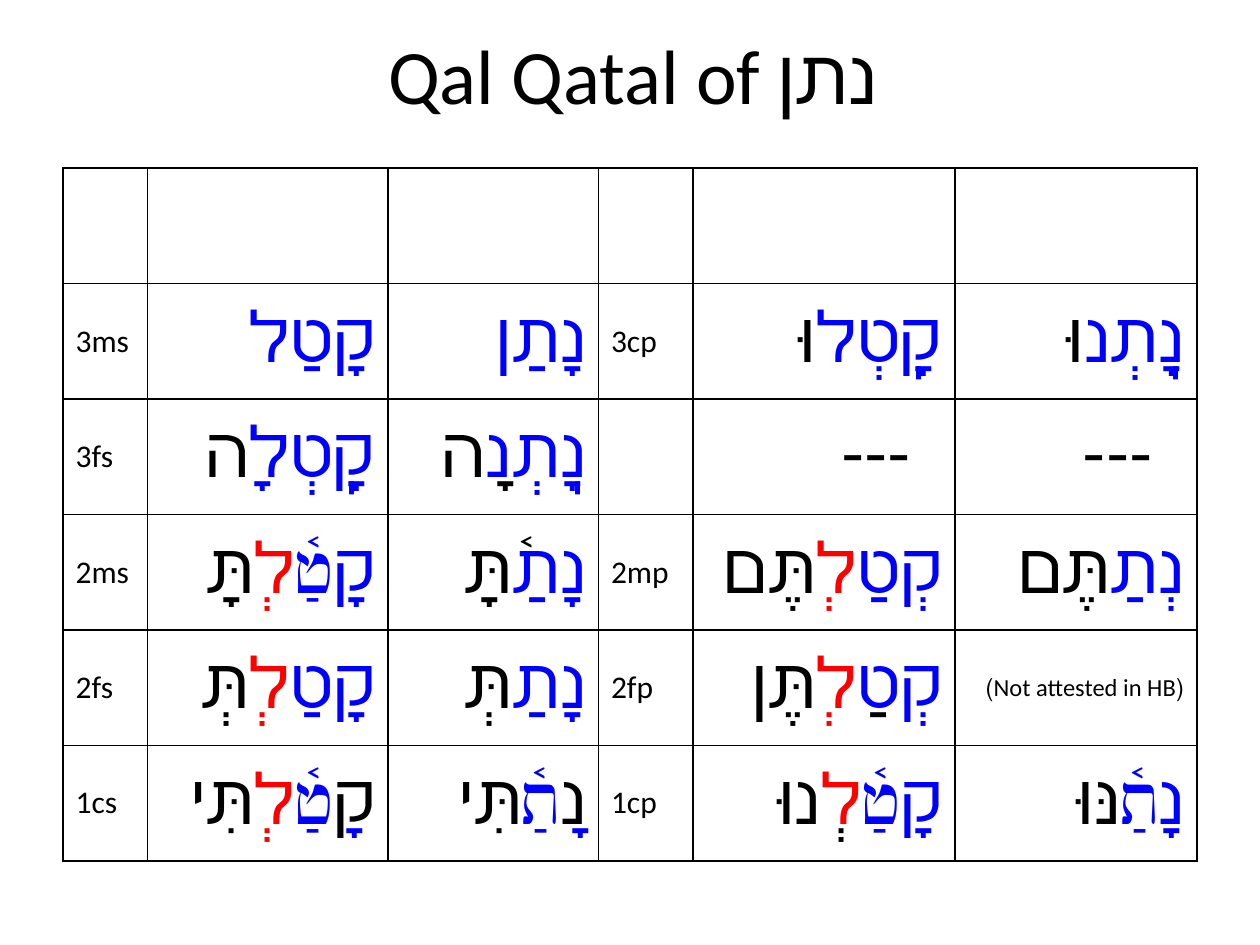
from lxml.etree import SubElement
from pptx import Presentation
from pptx.dml.color import RGBColor as RGB
from pptx.enum.text import MSO_ANCHOR as ANCHOR, PP_ALIGN as ALIGN
from pptx.oxml.ns import qn
from pptx.util import Inches, Pt

COLORS = {"black": "000000", "stem": "0000FF", "root": "FF0000"}


def add_run(p, text, size, font, color="black"):
    r = p.add_run()
    r.text = text
    r.font.size = Pt(size)
    r.font.name = font
    r.font.color.rgb = RGB.from_string(COLORS[color])


def add_borders(cell):
    tc_pr = cell._tc.get_or_add_tcPr()
    for side in ("lnL", "lnR", "lnT", "lnB"):
        ln = SubElement(tc_pr, qn(f"a:{side}"), w=str(Pt(1)))
        fill = SubElement(ln, qn("a:solidFill"))
        SubElement(fill, qn("a:srgbClr"), val=COLORS["black"])


prs = Presentation()
prs.slide_width, prs.slide_height = Inches(10), Inches(7.5)
s = prs.slides.add_slide(prs.slide_layouts[5])

# Title
title = s.shapes.title
title.left, title.top = Inches(0.52), Inches(0)
title.width, title.height = Inches(9), Inches(1.17)
tf = title.text_frame
tf.vertical_anchor = ANCHOR.MIDDLE
p = tf.paragraphs[0]
p.alignment = ALIGN.CENTER
add_run(p, "Qal Qatal of ", 44, "Calibri")
add_run(p, "נתן", 44, "Arial")

# Paradigm: a string is a label, a list holds the coloured parts of a verb form
DASHES = [("\t---", "black")]
ROWS = [
    ["", "", "", "", "", ""],
    ["3ms", [("קָטַל", "stem")], [("נָתַן", "stem")],
     "3cp", [("קָֽטְל", "stem"), ("וּ", "black")], [("נָֽתְנ", "stem"), ("וּ", "black")]],
    ["3fs", [("קָֽטְלָ", "stem"), ("ה", "black")], [("נָֽתְנ", "stem"), ("ָה", "black")],
     "", DASHES, DASHES],
    ["2ms", [("קָטַ֫", "stem"), ("לְ", "root"), ("תָּ", "black")],
     [("נָתַ", "stem"), ("֫תָּ", "black")],
     "2mp", [("קְטַ", "stem"), ("לְ", "root"), ("תֶּם", "black")],
     [("נְתַ", "stem"), ("תֶּם", "black")]],
    ["2fs", [("קָטַ", "stem"), ("לְ", "root"), ("תְּ", "black")],
     [("נָתַ", "stem"), ("תְּ", "black")],
     "2fp", [("קְט", "stem"), ("ַ", "black"), ("לְ", "root"), ("תֶּן", "black")],
     "(Not attested in HB)"],
    ["1cs", [("ק", "black"), ("ָטַ֫", "stem"), ("לְ", "root"), ("תִּי", "black")],
     [("נ", "black"), ("ָתַ֫", "stem"), ("תִּי", "black")],
     "1cp", [("קָטַ֫", "stem"), ("ל", "root"), ("ְנוּ", "black")],
     [("נָתַ֫", "stem"), ("נּוּ", "black")]],
]
LABEL_COLS = (0, 3)

# Table grid
table = s.shapes.add_table(len(ROWS), 6, Inches(0.5), Inches(4 / 3),
                           Inches(9), Inches(5.5)).table
table.first_row = table.horz_banding = False
for col, width in zip(table.columns, (0.67, 1.91, 1.67, 0.75, 2.08, 1.92)):
    col.width = Inches(width)
for row in table.rows:
    row.height = Inches(5.5 / len(ROWS))

# Table cells
for i, forms in enumerate(ROWS):
    for j, form in enumerate(forms):
        cell = table.cell(i, j)
        add_borders(cell)
        cell.fill.background()
        cell.vertical_anchor = ANCHOR.MIDDLE
        if not form:
            continue
        p = cell.text_frame.paragraphs[0]
        if j not in LABEL_COLS:
            p.alignment = ALIGN.RIGHT
            p_pr = p._p.get_or_add_pPr()
            p_pr.set("rtl", "1")
            tabs = SubElement(p_pr, qn("a:tabLst"))
            SubElement(tabs, qn("a:tab"), pos=str(Inches(0.25)), algn="r")
        if isinstance(form, str):
            add_run(p, form, 18 if j in LABEL_COLS else 14, "Calibri")
        else:
            for text, color in form:
                add_run(p, text, 40, "Arial", color)

prs.save("out.pptx")
